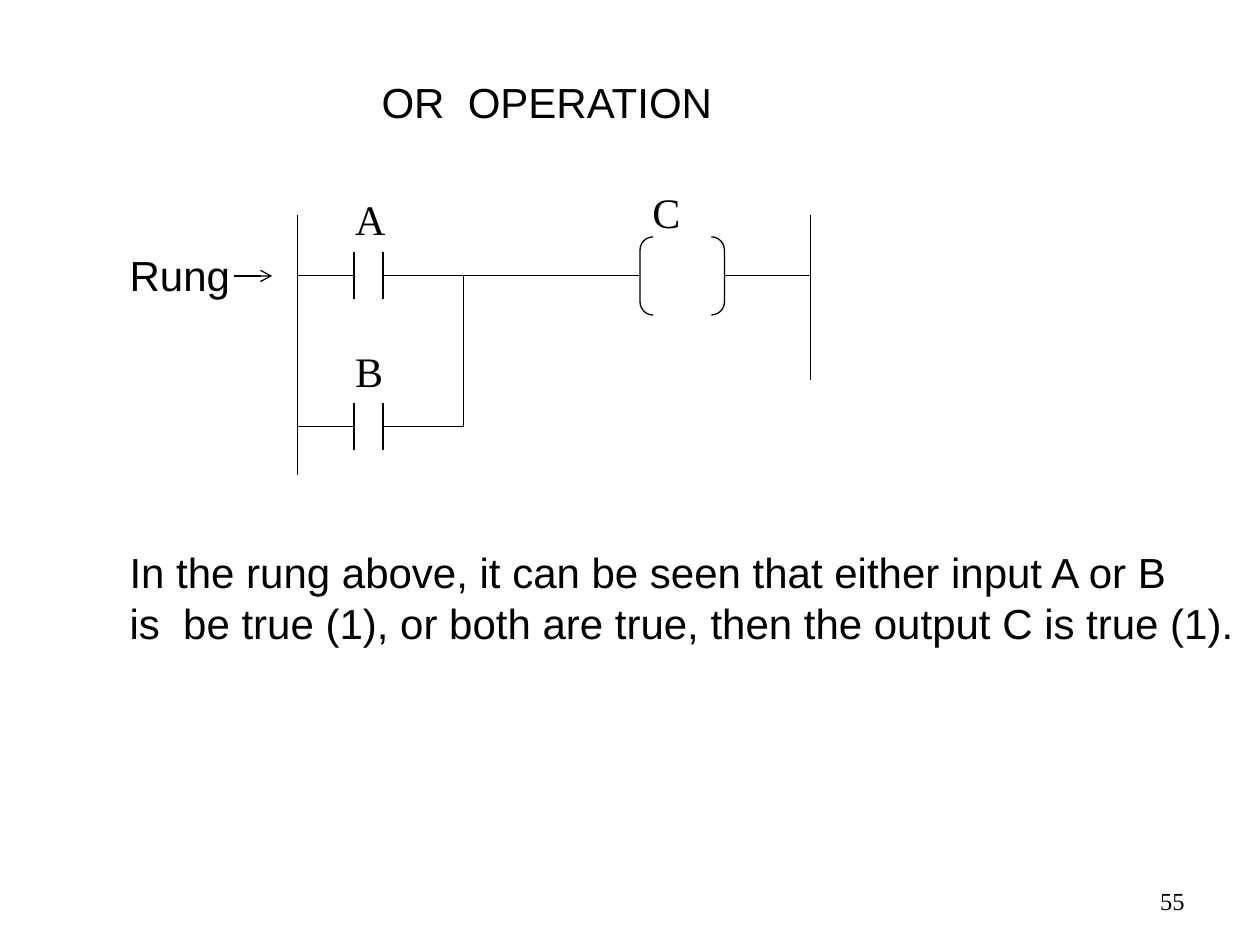
from collections import namedtuple

from lxml import etree
from pptx import Presentation
from pptx import util as u
from pptx.dml.color import RGBColor
from pptx.enum import shapes, text
from pptx.oxml.ns import qn

COLORS = {"ink": "000000", "paper": "FFFFFF"}
SANS, SERIF = "Arial", "Times New Roman"
COLUMNS, ROWS = 100, 75
CELL = u.Inches(10) // COLUMNS

Box = namedtuple("Box", "col row cols rows")


def grid(*cells):
    """Turn grid columns and rows into slide lengths."""
    return [u.Emu(round(cell * CELL)) for cell in cells]


def ink_line(line):
    """Give an outline the thin ink stroke of the diagram."""
    line.color.rgb = RGBColor.from_string(COLORS["ink"])
    line.width = u.Pt(0.75)


def wire(slide, start, end, arrow=False):
    """Draw a straight wire between two grid points."""
    link = slide.shapes.add_connector(
        shapes.MSO_CONNECTOR.STRAIGHT, *grid(*start, *end))
    ink_line(link.line)
    properties = link._element.spPr
    if arrow:
        outline = properties.find(qn("a:ln"))
        etree.SubElement(outline, qn("a:tailEnd"), type="arrow")
    etree.SubElement(properties, qn("a:effectLst"))


def words(slide, box, lines, font=SANS, size=24, wrap=False,
          align=text.PP_ALIGN.LEFT, anchor=text.MSO_ANCHOR.TOP):
    """Place lines of text, one paragraph each, in a box."""
    frame = slide.shapes.add_textbox(*grid(*box)).text_frame
    frame.word_wrap = wrap
    frame.vertical_anchor = anchor
    frame.text = "\n".join(lines)
    for paragraph in frame.paragraphs:
        paragraph.alignment = align
        paragraph.font.name = font
        paragraph.font.size = u.Pt(size)
        paragraph.font.color.rgb = RGBColor.from_string(COLORS["ink"])


def contact(slide, box, label):
    """Draw an input contact in its rung, with the label above it."""
    left, right = box.col + 4.5, box.col + 6.8
    middle = box.row + box.rows / 2
    for plate in (left, right):
        wire(slide, (plate, box.row), (plate, box.row + box.rows))
    wire(slide, (box.col, middle), (left, middle))
    wire(slide, (right, middle), (box.col + box.cols, middle))
    words(slide, Box(box.col + 3.6, box.row - 5.1, 4.5, 5), [label], SERIF)


def coil(slide, box, label):
    """Draw an output coil with its label above it."""
    brackets = slide.shapes.add_shape(
        shapes.MSO_SHAPE.DOUBLE_BRACKET, *grid(*box))
    brackets.adjustments[0] = 0.167
    brackets.shadow.inherit = False
    brackets.fill.background()
    ink_line(brackets.line)
    words(slide, Box(box.col, box.row - 4.5, 4.3, 5), [label], SERIF)


def ladder(slide, box):
    """Draw two parallel inputs that feed one output between the rails."""
    right_rail = box.col + box.cols
    rung, branch = box.row + 4.75, box.row + 16.75
    junction = box.col + 13.2
    output = Box(box.col + 27.2, box.row + 1.7, 6.7, 6.2)
    wire(slide, (box.col, box.row), (box.col, box.row + box.rows))
    wire(slide, (right_rail, box.row), (right_rail, box.row + 13.1))
    for label, level in (("A", rung), ("B", branch)):
        contact(slide, Box(box.col, level - 1.85, 13.2, 3.7), label)
    wire(slide, (junction, branch), (junction, rung))
    wire(slide, (junction, rung), (output.col, rung))
    coil(slide, output, "C")
    wire(slide, (output.col + output.cols, rung), (right_rail, rung))


def rung_pointer(slide, box):
    """Name the rung and point an arrow at it."""
    words(slide, box, ["Rung"])
    level = box.row + box.rows / 2 + 0.1
    wire(slide, (box.col + 9.3, level), (box.col + 12.3, level), arrow=True)


def page_number(slide, box):
    """Set the page number in the lower right corner."""
    words(slide, box, ["55"], SERIF, 14, True,
          text.PP_ALIGN.RIGHT, text.MSO_ANCHOR.MIDDLE)


def main():
    """Build the slide and save it."""
    deck = Presentation()
    deck.slide_width, deck.slide_height = grid(COLUMNS, ROWS)
    slide = deck.slides.add_slide(deck.slide_layouts[6])
    slide.background.fill.solid()
    slide.background.fill.fore_color.rgb = RGBColor.from_string(COLORS["paper"])
    words(slide, Box(29.3, 5.6, 28.5, 5), ["OR  OPERATION"])
    rung_pointer(slide, Box(9.3, 19.3, 10.1, 5))
    ladder(slide, Box(23.6, 17.1, 40.7, 20.6))
    words(slide, Box(9.3, 42.9, 90.5, 9.1), [
        "In the rung above, it can be seen that either input A or B",
        "is  be true (1), or both are true, then the output C is true (1).",
    ])
    page_number(slide, Box(71.7, 69.5, 23.3, 4))
    deck.save("out.pptx")


if __name__ == "__main__":
    main()
